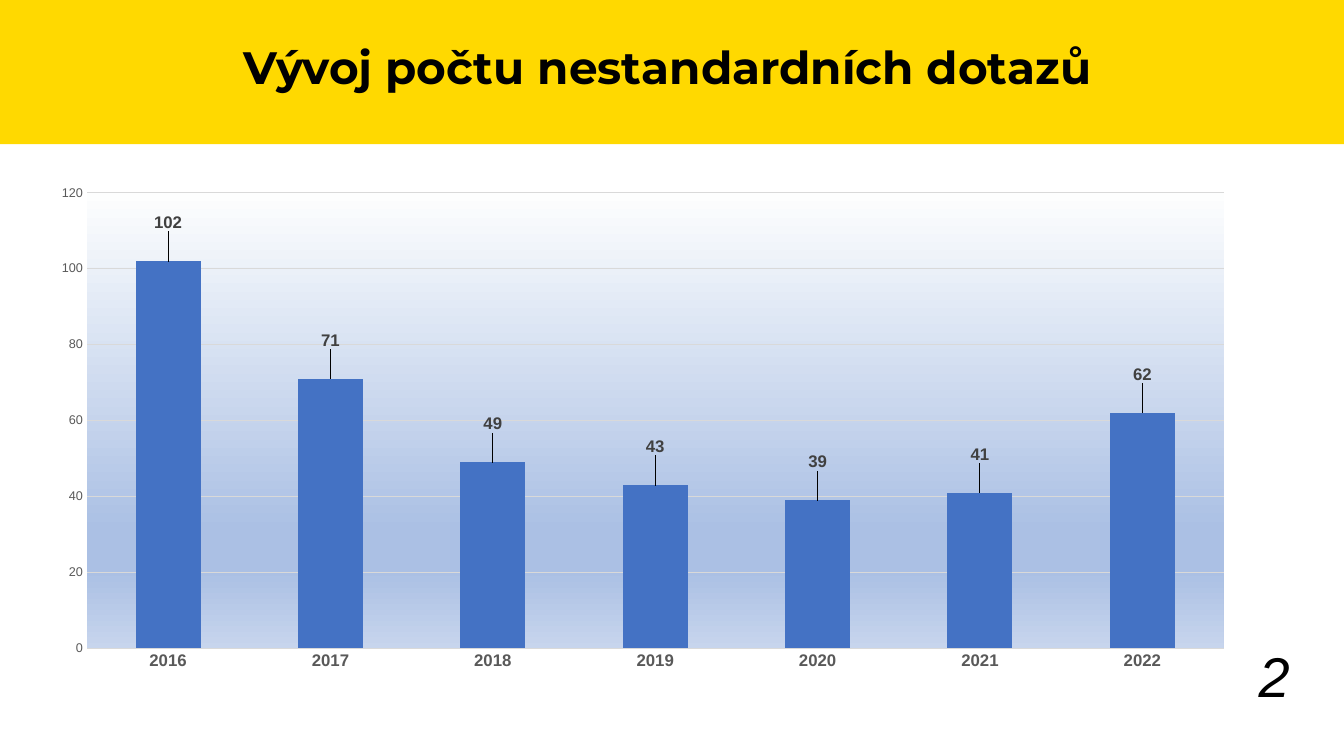
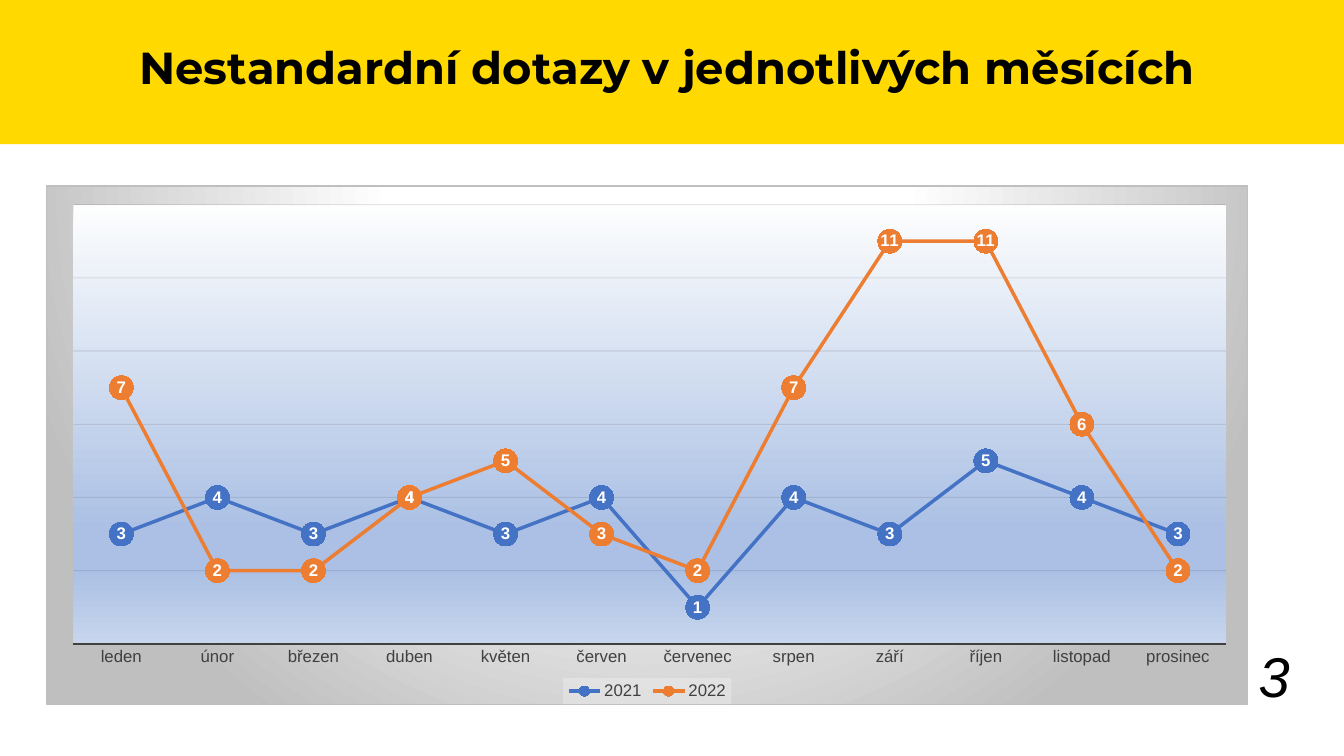
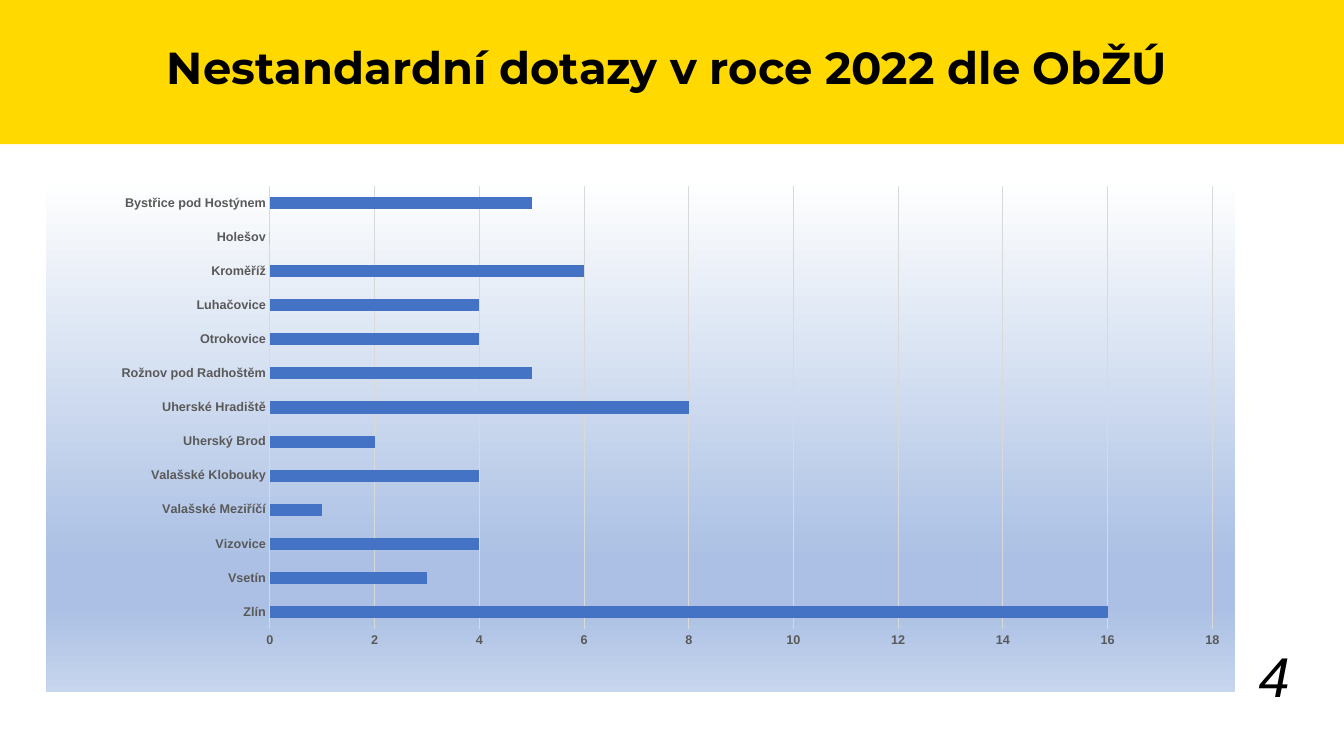
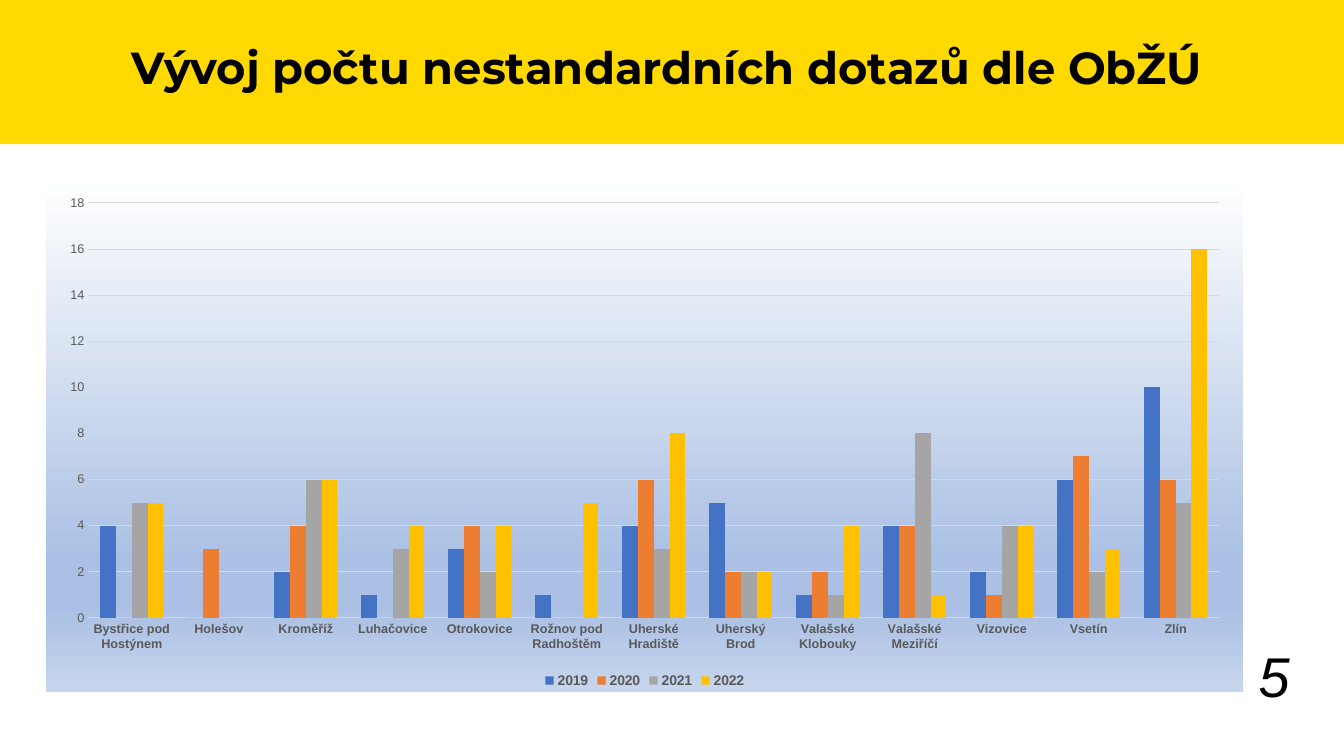
from lxml import etree
from pptx import Presentation
from pptx.chart.data import CategoryChartData
from pptx.dml.color import RGBColor
from pptx.enum.chart import (XL_CHART_TYPE, XL_LABEL_POSITION, XL_LEGEND_POSITION,
                             XL_MARKER_STYLE, XL_TICK_MARK)
from pptx.enum.shapes import MSO_SHAPE
from pptx.enum.text import MSO_ANCHOR, MSO_AUTO_SIZE, PP_ALIGN
from pptx.oxml import parse_xml
from pptx.oxml.ns import nsdecls, qn
from pptx.util import Inches, Pt

YELLOW = RGBColor(0xFF, 0xD9, 0x00)
BLACK = RGBColor(0x00, 0x00, 0x00)
WHITE = RGBColor(0xFF, 0xFF, 0xFF)
INK = RGBColor(0x0D, 0x0D, 0x0D)
DARK = RGBColor(0x40, 0x40, 0x40)
GREY = RGBColor(0x59, 0x59, 0x59)
PALE = RGBColor(0xD9, 0xD9, 0xD9)
BLUE = RGBColor(0x44, 0x72, 0xC4)
ORANGE = RGBColor(0xED, 0x7D, 0x31)
SILVER = RGBColor(0xA5, 0xA5, 0xA5)
GOLD = RGBColor(0xFF, 0xC0, 0x00)
SERIES_COLORS = [BLUE, ORANGE, SILVER, GOLD]

NO_FILL = "<a:noFill/>"
NO_BORDER = "<a:ln><a:noFill/></a:ln>"
GREY_BORDER = '<a:ln w="9525"><a:solidFill><a:srgbClr val="BFBFBF"/></a:solidFill></a:ln>'
LEGEND_FILL = ('<a:solidFill><a:srgbClr val="F2F2F2"><a:alpha val="39000"/>'
               '</a:srgbClr></a:solidFill>')
BLUE_FADE = ('<a:gradFill><a:gsLst><a:gs pos="0"><a:srgbClr val="FDFEFE"/></a:gs>'
             '<a:gs pos="74000"><a:srgbClr val="ABC0E4"/></a:gs>'
             '<a:gs pos="83000"><a:srgbClr val="ABC0E4"/></a:gs>'
             '<a:gs pos="100000"><a:srgbClr val="C7D5ED"/></a:gs></a:gsLst>'
             '<a:lin ang="5400000" scaled="0"/></a:gradFill>')
GREY_GLOW = ('<a:gradFill><a:gsLst><a:gs pos="0"><a:srgbClr val="FFFFFF"/></a:gs>'
             '<a:gs pos="39000"><a:srgbClr val="FFFFFF"/></a:gs>'
             '<a:gs pos="100000"><a:srgbClr val="BFBFBF"/></a:gs></a:gsLst>'
             '<a:path path="circle"><a:fillToRect l="50000" t="-80000" r="50000"'
             ' b="180000"/></a:path></a:gradFill>')

MONTHS = ["leden", "únor", "březen", "duben", "květen", "červen", "červenec",
          "srpen", "září", "říjen", "listopad", "prosinec"]
OFFICES = ["Bystřice pod Hostýnem", "Holešov", "Kroměříž", "Luhačovice", "Otrokovice",
           "Rožnov pod Radhoštěm", "Uherské Hradiště", "Uherský Brod",
           "Valašské Klobouky", "Valašské Meziříčí", "Vizovice", "Vsetín", "Zlín"]
BY_OFFICE = {
    "2019": [4, 0, 2, 1, 3, 1, 4, 5, 1, 4, 2, 6, 10],
    "2020": [0, 3, 4, 0, 4, 0, 6, 2, 2, 4, 1, 7, 6],
    "2021": [5, 0, 6, 3, 2, 0, 3, 2, 1, 8, 4, 2, 5],
    "2022": [5, 0, 6, 4, 4, 5, 8, 2, 4, 1, 4, 3, 16],
}

SMALL = {"size": Pt(9), "color": GREY, "bold": False}
SMALL_BOLD = {**SMALL, "bold": True}
MONTH_FONT = {"size": Pt(12), "color": DARK, "bold": False}
LABEL_FONT = {"size": Pt(12), "color": DARK, "bold": True}

SLIDES = [
    {"title": "Vývoj počtu nestandardních dotazů", "title_size": 32.4,
     "kind": XL_CHART_TYPE.COLUMN_CLUSTERED, "size": (11.83, 5.03),
     "categories": [str(year) for year in range(2016, 2023)],
     "series": {"Series 1": [102, 71, 49, 43, 39, 41, 62]},
     "top": 120, "step": 20, "gap": 150, "plot": (0.034, 0.014, 0.953, 0.899),
     "fill": NO_FILL, "plot_fill": BLUE_FADE, "border": NO_BORDER,
     "category_font": {**SMALL_BOLD, "size": Pt(12)}, "value_font": SMALL,
     "axis_line": None, "legend_font": None},
    {"title": "Nestandardní dotazy v jednotlivých měsících", "title_size": 32,
     "kind": XL_CHART_TYPE.LINE_MARKERS, "size": (11.92, 5.15),
     "categories": MONTHS,
     "series": {"2021": [3, 4, 3, 4, 3, 4, 1, 4, 3, 5, 4, 3],
                "2022": [7, 2, 2, 4, 5, 3, 2, 7, 11, 11, 6, 2]},
     "top": 12, "step": 2, "gap": None, "plot": (0.022, 0.036, 0.96, 0.848),
     "fill": GREY_GLOW, "plot_fill": BLUE_FADE, "border": GREY_BORDER,
     "category_font": MONTH_FONT, "value_font": None,
     "axis_line": (DARK, 1.5), "legend_font": MONTH_FONT},
    {"title": "Nestandardní dotazy v roce 2022 dle ObŽÚ", "title_size": 32,
     "kind": XL_CHART_TYPE.BAR_CLUSTERED, "size": (11.79, 5.03),
     "categories": OFFICES[::-1], "series": {"Series 1": BY_OFFICE["2022"][::-1]},
     "top": 18, "step": 2, "gap": 182, "plot": (0.188, 0, 0.793, 0.875),
     "fill": BLUE_FADE, "plot_fill": NO_FILL, "border": NO_BORDER,
     "category_font": SMALL_BOLD, "value_font": SMALL_BOLD,
     "axis_line": (PALE, 0.75), "legend_font": None},
    {"title": "Vývoj počtu nestandardních dotazů dle ObŽÚ", "title_size": 32,
     "kind": XL_CHART_TYPE.COLUMN_CLUSTERED, "size": (11.87, 5.03),
     "categories": OFFICES, "series": BY_OFFICE,
     "top": 18, "step": 2, "gap": 150, "plot": None,
     "fill": BLUE_FADE, "plot_fill": NO_FILL, "border": NO_BORDER,
     "category_font": SMALL_BOLD, "value_font": SMALL,
     "axis_line": None, "legend_font": {**SMALL_BOLD, "size": Pt(10)}},
]


def set_font(font, values):
    for name, value in {"name": "Arial", **values}.items():
        if name == "color":
            font.color.rgb = value
        else:
            setattr(font, name, value)


def chart_xml(tag, content):
    return parse_xml(f'<c:{tag} {nsdecls("c", "a")}>{content}</c:{tag}>')


deck = Presentation()
deck.slide_width, deck.slide_height = Inches(13.33), Inches(7.5)
layout = deck.slide_layouts[5]
pages = [deck.slides.add_slide(layout) for _ in SLIDES]

# The yellow band and the title position live on the layout.
band = pages[0].shapes.add_shape(MSO_SHAPE.RECTANGLE, 0, 0, deck.slide_width, Inches(1.43))
band.shadow.inherit = False
band.fill.solid()
band.fill.fore_color.rgb = YELLOW
band.line.fill.background()
band.element.nvSpPr.cNvPr.set("id", "20")
layout.shapes.element.insert(2, band.element)
heading = layout.placeholders[0]
heading.left, heading.top = Inches(0.46), Inches(0.4)
heading.width, heading.height = Inches(12.32), Inches(1.02)

for number, (page, item) in enumerate(zip(pages, SLIDES), start=2):
    number_box = page.shapes.add_textbox(Inches(9.89), Inches(6.51), Inches(3), Inches(0.57))
    number_format = {"size": Pt(40), "color": BLACK, "italic": True}
    title_format = {"name": "Montserrat", "size": Pt(item["title_size"]),
                    "color": BLACK, "bold": True}
    for box, text, anchor, align, spacing, font in [
            (page.shapes.title, item["title"], MSO_ANCHOR.TOP, PP_ALIGN.CENTER, 0.9, title_format),
            (number_box, str(number), MSO_ANCHOR.BOTTOM, PP_ALIGN.RIGHT, 1.0, number_format)]:
        frame = box.text_frame
        frame.word_wrap = True
        frame.auto_size = MSO_AUTO_SIZE.NONE
        frame.vertical_anchor = anchor
        para = frame.paragraphs[0]
        para.alignment, para.line_spacing = align, spacing
        span = para.add_run()
        span.text = text
        set_font(span.font, font)

    data = CategoryChartData()
    data.categories = item["categories"]
    for name, values in item["series"].items():
        data.add_series(name, values)
    width, height = item["size"]
    chart = page.shapes.add_chart(item["kind"], Inches(0.46), Inches(1.84),
                                  Inches(width), Inches(height), data).chart
    set_font(chart.font, {"size": Pt(10), "color": BLACK})
    chart.has_title = False
    plot = chart.plots[0]
    plot.vary_by_categories = False
    is_line = item["kind"] == XL_CHART_TYPE.LINE_MARKERS

    # Axes
    category_axis, value_axis = chart.category_axis, chart.value_axis
    for axis in (category_axis, value_axis):
        axis.major_tick_mark = axis.minor_tick_mark = XL_TICK_MARK.NONE
        axis.format.line.fill.background()
    set_font(category_axis.tick_labels.font, item["category_font"])
    if item["axis_line"]:
        color, points = item["axis_line"]
        category_axis.format.line.color.rgb = color
        category_axis.format.line.width = Pt(points)
    value_axis.minimum_scale, value_axis.maximum_scale = 0, item["top"]
    value_axis.major_unit = item["step"]
    value_axis.has_major_gridlines = True
    grid = value_axis.major_gridlines.format.line
    grid.color.rgb = INK if is_line else PALE
    grid.width = Pt(0.75)
    if item["value_font"]:
        set_font(value_axis.tick_labels.font, item["value_font"])
    else:
        value_axis.visible = False

    # Series
    for series, color in zip(plot.series, SERIES_COLORS):
        if is_line:
            series.smooth = False
            series.format.line.color.rgb = color
            series.format.line.width = Pt(2.5)
            series.marker.style, series.marker.size = XL_MARKER_STYLE.CIRCLE, 17
            shapes = [series.marker.format]
            series.marker.format.line.color.rgb = color
            labels = series.data_labels
            labels.show_value = True
            labels.position = XL_LABEL_POSITION.CENTER
            set_font(labels.font, {**LABEL_FONT, "color": WHITE})
        else:
            series.invert_if_negative = False
            shapes = [series.format]
        for shape in shapes:
            shape.fill.solid()
            shape.fill.fore_color.rgb = color
    if is_line:
        grid_color = chart.element.xpath(".//c:majorGridlines//a:srgbClr")[0]
        etree.SubElement(grid_color, qn("a:alpha")).set("val", "10000")
    else:
        plot.gap_width, plot.overlap = item["gap"], 0

    # Yearly totals carry labels raised above their columns.
    if number == 2:
        totals = plot.series[0]
        totals.data_labels.show_value = True
        set_font(totals.data_labels.font, LABEL_FONT)
        for index in range(len(item["categories"])):
            label = totals.points[index].data_label
            set_font(label.font, LABEL_FONT)
            label.position = XL_LABEL_POSITION.OUTSIDE_END
        for label in chart.element.xpath(".//c:dLbl"):
            label.insert(1, chart_xml("layout", '<c:manualLayout><c:x val="0"/>'
                                                '<c:y val="-0.05"/></c:manualLayout>'))

    chart.has_legend = item["legend_font"] is not None
    if chart.has_legend:
        chart.legend.position = XL_LEGEND_POSITION.BOTTOM
        chart.legend.include_in_layout = False
        set_font(chart.legend.font, item["legend_font"])
        if is_line:
            overlay = chart.element.xpath(".//c:legend/c:overlay")[0]
            overlay.addnext(chart_xml("spPr", LEGEND_FILL + NO_BORDER))

    # Backgrounds and plot position
    plot_area = chart.element.xpath(".//c:plotArea")[0]
    plot_area.append(chart_xml("spPr", item["plot_fill"] + NO_BORDER))
    chart.element.xpath("./c:chart")[0].addnext(
        chart_xml("spPr", item["fill"] + item["border"]))
    if item["plot"]:
        for old in plot_area.xpath("./c:layout"):
            plot_area.remove(old)
        sizes = "".join(f'<c:{side} val="{value}"/>'
                        for side, value in zip("xywh", item["plot"]))
        plot_area.insert(0, chart_xml(
            "layout", '<c:manualLayout><c:layoutTarget val="inner"/>'
            f'<c:xMode val="edge"/><c:yMode val="edge"/>{sizes}</c:manualLayout>'))

deck.save("out.pptx")
